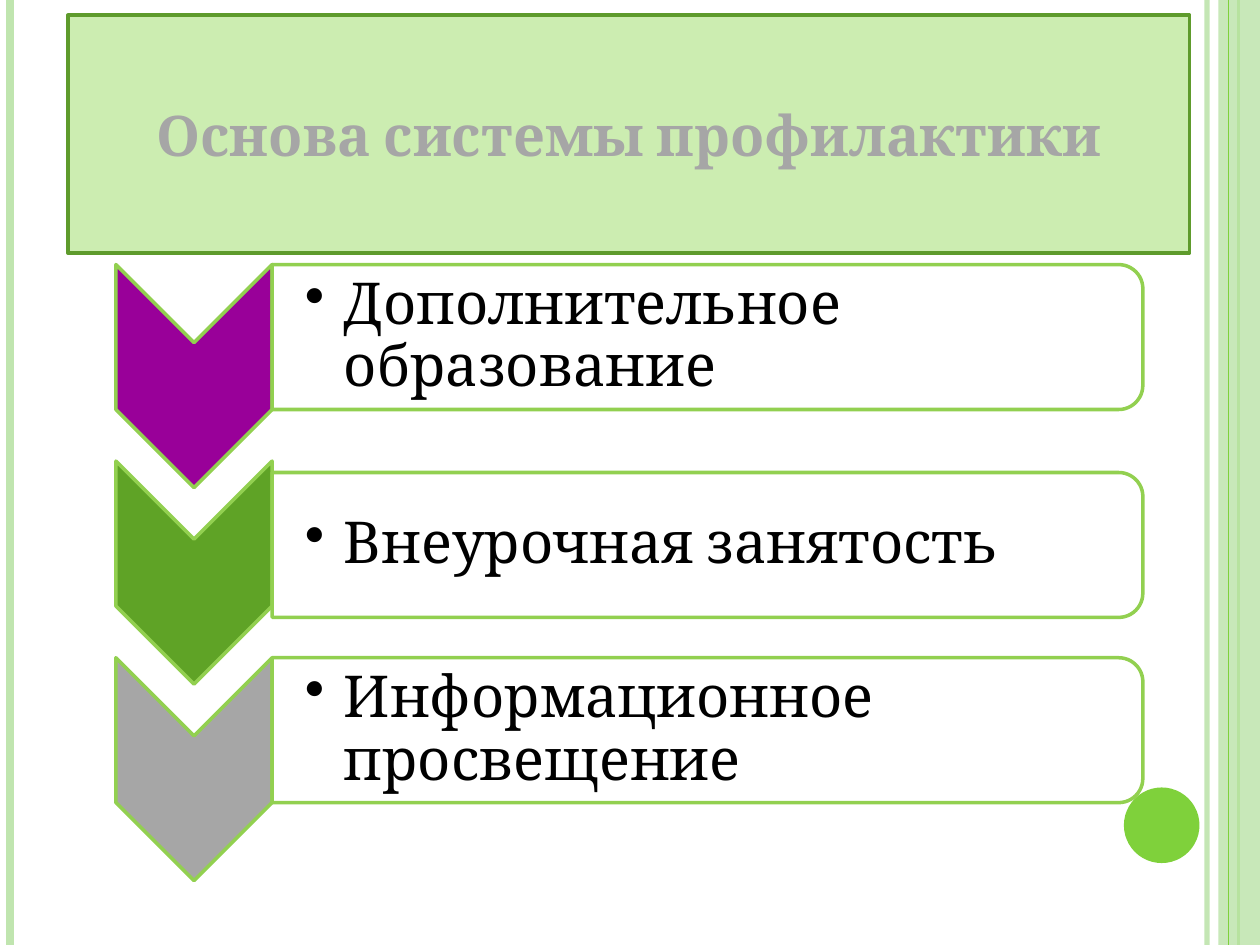
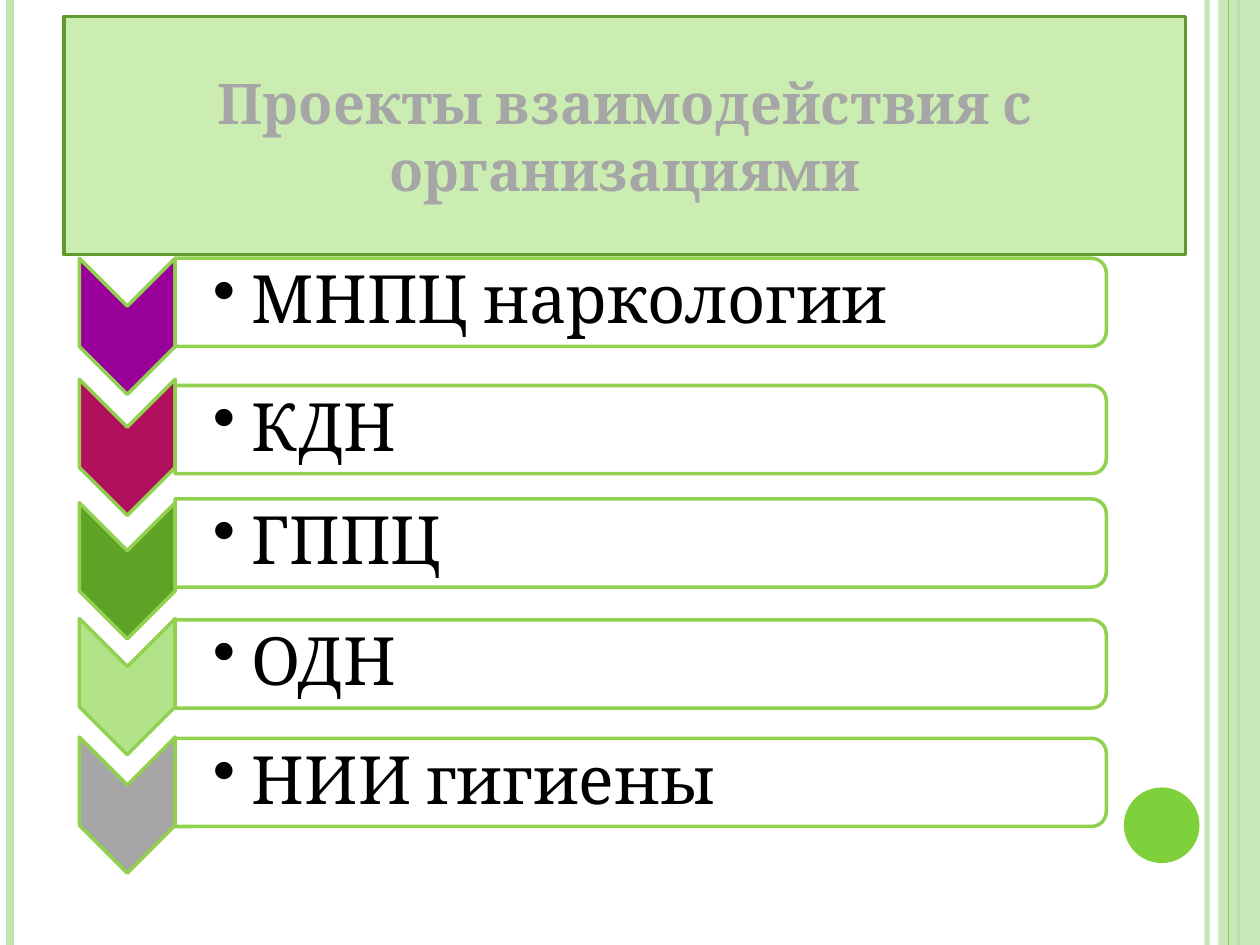
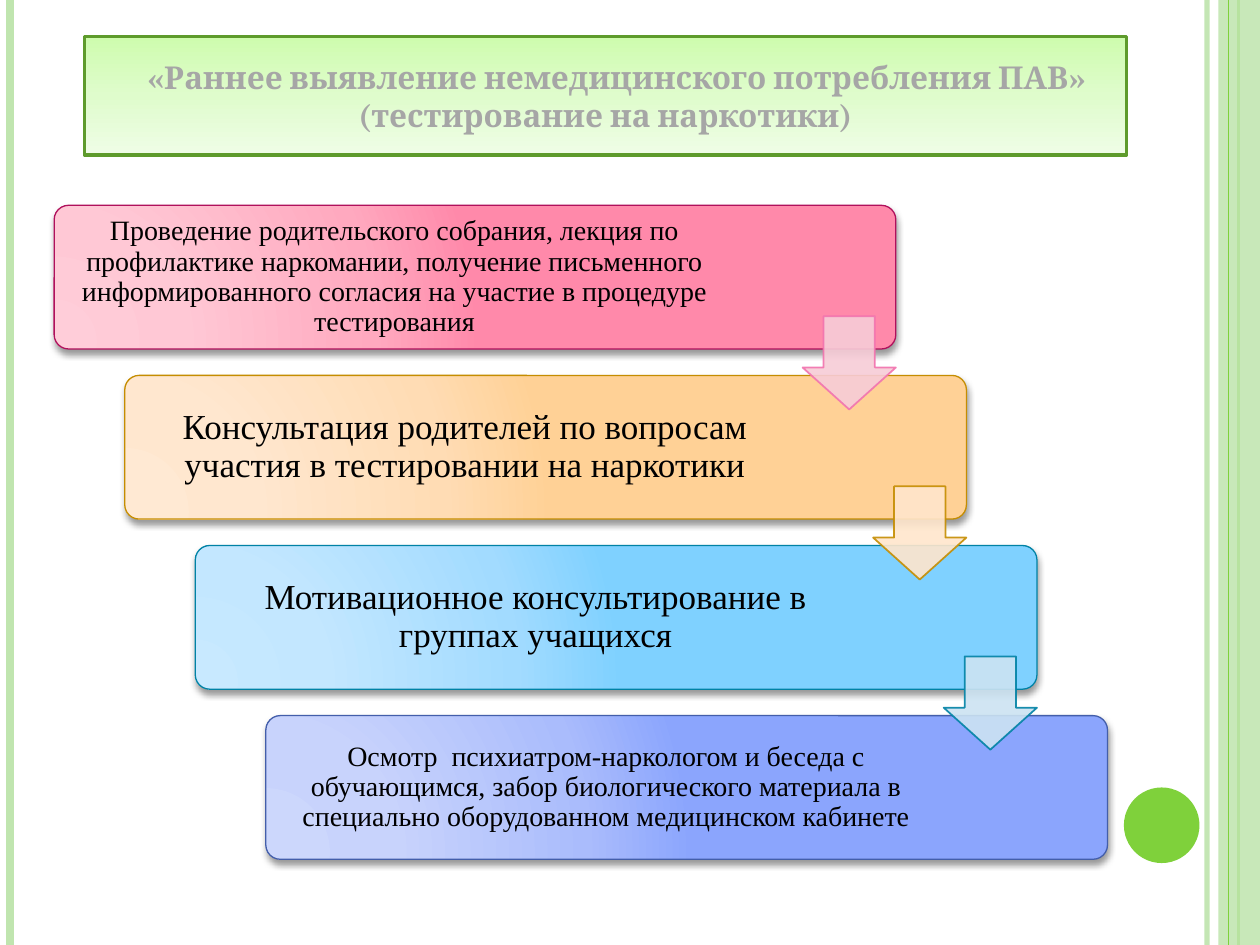
import pptx
import pptx.util
import pptx.dml.color
import pptx.enum.shapes
import pptx.enum.text
import pptx.oxml
import pptx.oxml.ns
from dataclasses import dataclass

SHAPE = pptx.enum.shapes.MSO_SHAPE
ALIGN = pptx.enum.text.PP_ALIGN
MIDDLE = pptx.enum.text.MSO_ANCHOR.MIDDLE
inch = pptx.util.Inches
NS = pptx.oxml.ns.nsdecls("a")


@dataclass(frozen=True)
class Theme:
    width: float = 10
    height: float = 7.5
    heading_font: str = "Cambria"
    step_font: str = "Times New Roman"
    title: str = "A6A6A6"
    title_size: int = 32
    small_title_size: int = 18
    text: str = "000000"
    pale: str = "C0E5AF"
    accent: str = "7FD13B"
    callout: str = "CCEDB1"
    callout_line: str = "5E9B2C"
    row_line: str = "92D050"
    white: str = "FFFFFF"
    purple: str = "990099"
    crimson: str = "B0105C"
    green: str = "5FA326"
    light_green: str = "B2E389"
    gray: str = "A6A6A6"


T = Theme()

# Content: each row is (text, chevron colour, chevron top, bar top)
LISTS = [
    dict(
        title="Основа системы профилактики", title_at=(0.54, 0.12),
        left=0.92, chevron=(1.24, 1.77), bar=(6.91, 1.15), size=33, inset=0.26,
        rows=[
            ("Дополнительное образование", T.purple, 2.1, 2.1),
            ("Внеурочная занятость", T.green, 3.66, 3.75),
            ("Информационное просвещение", T.gray, 5.22, 5.22),
        ],
    ),
    dict(
        title="Проекты взаимодействия с организациями", title_at=(0.51, 0.13),
        left=0.63, chevron=(0.76, 1.08), bar=(7.39, 0.7), size=38, inset=0.3,
        rows=[
            ("МНПЦ наркологии", T.purple, 2.05, 2.05),
            ("КДН", T.crimson, 3.01, 3.06),
            ("ГППЦ", T.green, 3.99, 3.96),
            ("ОДН", T.light_green, 4.91, 4.92),
            ("НИИ гигиены", T.gray, 5.85, 5.86),
        ],
    ),
]

TESTING_TITLE = "«Раннее выявление немедицинского потребления ПАВ» (тестирование на наркотики)"
TITLE_STOPS = [(0, "CEFCAE"), (50, "DFFCCC"), (100, "EFFDE6")]

# Steps: text, size, line colour, gradient colours, (arrow fill, arrow line)
STEPS = [
    ("Проведение родительского собрания, лекция по профилактике наркомании, "
     "получение письменного информированного согласия на участие в процедуре тестирования",
     16, "B0105C", ("FFCDD9", "FFC8D5", "FFA9BF", "FF89AA"), ("F7CCD7", "F273AF")),
    ("Консультация родителей по вопросам участия в тестировании на наркотики",
     20, "C58D01", ("FFE9D3", "FFE7CF", "FFDCB4", "FFD196"), ("FFE6CC", "C58D01")),
    ("Мотивационное консультирование в группах учащихся",
     20, "0082A5", ("C8E9FF", "C3E7FF", "A2DBFF", "7FD1FF"), ("CCE3F2", "0082A5")),
    ("Осмотр  психиатром-наркологом и беседа с обучающимся, забор биологического "
     "материала в специально оборудованном медицинском кабинете",
     16, "435EAA", ("CCD7FC", "C8D3FC", "AABCFC", "8BA5FD"), None),
]
STOP_PLACES = (0, 30, 75, 100)


# Drawing helpers
def rgb(value):
    return pptx.dml.color.RGBColor.from_string(value)


def xml(tag, attrs="", inner=""):
    return pptx.oxml.parse_xml(f"<a:{tag} {NS} {attrs}>{inner}</a:{tag}>")


def set_alpha(sp, where, percent):
    color = sp.element.spPr.xpath(f"./{where}/a:srgbClr")[0]
    color.append(xml("alpha", f'val="{percent * 1000}"'))


def set_line(sp, color, width, alpha=None):
    sp.line.color.rgb = rgb(color)
    sp.line.width = pptx.util.Pt(width)
    if alpha:
        set_alpha(sp, "a:ln/a:solidFill", alpha)


def set_fill(sp, color, alpha=None):
    sp.fill.solid()
    sp.fill.fore_color.rgb = rgb(color)
    if alpha:
        set_alpha(sp, "a:solidFill", alpha)


def set_gradient(sp, stops, direction):
    gs = "".join(f'<a:gs pos="{pos * 1000}"><a:srgbClr val="{c}"/></a:gs>' for pos, c in stops)
    geometry = sp.element.spPr.xpath("./a:prstGeom")[0]
    geometry.addnext(xml("gradFill", 'rotWithShape="1"', f"<a:gsLst>{gs}</a:gsLst>{direction}"))


def add_shape(slide, kind, left, top, width, height):
    sp = slide.shapes.add_shape(kind, inch(left), inch(top), inch(width), inch(height))
    sp.shadow.inherit = False
    return sp


def add_turned(slide, kind, left, top, width, height):
    """Place a shape turned by 90 degrees so that it covers the given box."""
    sp = add_shape(slide, kind, left + (width - height) / 2, top + (height - width) / 2, height, width)
    sp.rotation = 90
    return sp


def write(sp, text, font, size, color, align, insets, bold=False):
    tf = sp.text_frame
    tf.word_wrap = True
    tf.auto_size = pptx.enum.text.MSO_AUTO_SIZE.NONE
    tf.vertical_anchor = MIDDLE
    tf.margin_left, tf.margin_top, tf.margin_right, tf.margin_bottom = map(inch, insets)
    p = tf.paragraphs[0]
    p.alignment = align
    r = p.add_run()
    r.text = text
    r.font.name, r.font.size, r.font.bold = font, pptx.util.Pt(size), bold
    r.font.color.rgb = rgb(color)
    return p


def add_text(slide, box, *args):
    tb = slide.shapes.add_textbox(*map(inch, box))
    p = write(tb, *args)
    p.line_spacing = 0.9
    return tb


def add_title(slide, text, preset, box, size):
    sp = slide.shapes.title
    sp.left, sp.top, sp.width, sp.height = map(inch, box)
    sp.element.spPr.append(xml("prstGeom", f'prst="{preset}"', "<a:avLst/>"))
    set_line(sp, T.callout_line, 2)
    write(sp, text, T.heading_font, size, T.title, ALIGN.CENTER, (0.1, 0.05, 0.1, 0.05), True)
    return sp


# Side bands and the round badge, kept on the master
def add_bands(slide, master):
    def band(x, color, width, alpha=None):
        line = slide.shapes.add_connector(
            pptx.enum.shapes.MSO_CONNECTOR.STRAIGHT, inch(x), 0, inch(x), inch(T.height))
        set_line(line, color, width, alpha)
        line.element.spPr.append(xml("effectLst"))
        return line

    parts = [band(9.58, T.pale, 3, 93), band(0.08, T.pale, 4.5), band(9.83, T.accent, 1.5)]
    strip = add_shape(slide, SHAPE.RECTANGLE, 9.67, 0, 0.33, T.height)
    set_fill(strip, T.pale, 87)
    strip.line.fill.background()
    parts += [strip, band(9.75, T.accent, 0.75)]
    badge = add_shape(slide, SHAPE.OVAL, 8.92, 6.25, 0.6, 0.6)
    set_fill(badge, T.accent)
    badge.line.fill.background()
    parts.append(badge)
    for i, sp in enumerate(parts):
        sp.element.xpath(".//p:cNvPr")[0].set("id", str(100 + i))
        master.shapes.element.insert(2 + i, sp.element)


# Chevron list slides
def build_list(slide, data):
    title = add_title(slide, data["title"], "downArrowCallout",
                      (*data["title_at"], 8.9, 1.89), T.title_size)
    set_fill(title, T.callout)
    chevron_w, chevron_h = data["chevron"]
    bar_w, bar_h = data["bar"]
    bar_left = data["left"] + chevron_w
    for text, color, chevron_top, bar_top in data["rows"]:
        chevron = add_turned(slide, SHAPE.CHEVRON, data["left"], chevron_top, chevron_w, chevron_h)
        set_fill(chevron, color)
        bar = add_turned(slide, SHAPE.ROUND_2_SAME_RECTANGLE, bar_left, bar_top, bar_w, bar_h)
        set_fill(bar, T.white, 90)
        for sp in (chevron, bar):
            set_line(sp, T.row_line, 2)
        tb = add_text(slide, (bar_left, bar_top + 0.04, bar_w - 0.05, bar_h - 0.08), text,
                      T.heading_font, data["size"], T.text, ALIGN.LEFT,
                      (data["inset"], 0.02, 0.02, 0.02))
        ppr = tb.element.xpath(".//a:pPr")[0]
        ppr.set("marL", str(inch(0.31)))
        ppr.set("indent", str(inch(-0.31)))
        ppr.append(xml("buChar", 'char="•"'))


# Staircase of testing steps
def build_steps(slide):
    title = add_title(slide, TESTING_TITLE, "roundRect", (0.67, 0.29, 8.27, 0.94), T.small_title_size)
    set_gradient(title, TITLE_STOPS, '<a:lin ang="5400000" scaled="0"/>')
    title.element.xpath(".//a:pPr")[0].set("indent", str(inch(0.18)))

    width, height, arrow_side = 6.68, 1.14, 0.74
    places = [(0.43 + 0.56 * i, 1.63 + 1.35 * i) for i in range(len(STEPS))]
    radial = '<a:path path="circle"><a:fillToRect l="5000" t="100000" r="120000" b="10000"/></a:path>'
    for (left, top), (text, size, line, colors, _) in zip(places, STEPS):
        card = add_shape(slide, SHAPE.ROUNDED_RECTANGLE, left, top, width, height)
        card.adjustments[0] = 0.1
        set_gradient(card, zip(STOP_PLACES, colors), radial)
        set_line(card, line, 0.75)
        card.element.spPr.xpath("./a:effectLst")[0].append(xml(
            "outerShdw", 'blurRad="50800" dist="25400" dir="5400000" rotWithShape="0"',
            '<a:srgbClr val="000000"><a:alpha val="40000"/></a:srgbClr>'))
        add_text(slide, (left + 0.04, top + 0.03, 5.32, 1.08), text, T.step_font, size, T.text,
                 ALIGN.CENTER, (0.07,) * 4)
    for (left, top), (*_, arrow_colors) in zip(places, STEPS):
        if arrow_colors:
            arrow = add_shape(slide, SHAPE.DOWN_ARROW, left + width - arrow_side, top + 0.88,
                              arrow_side, arrow_side)
            arrow.adjustments[0], arrow.adjustments[1] = 0.55, 0.45
            set_fill(arrow, arrow_colors[0], 90)
            set_line(arrow, arrow_colors[1], 1, 90)


def main():
    prs = pptx.Presentation()
    prs.slide_width, prs.slide_height = inch(T.width), inch(T.height)
    title_only = prs.slide_layouts[5]
    slides = [prs.slides.add_slide(title_only) for _ in range(len(LISTS) + 1)]
    add_bands(slides[0], prs.slide_master)
    for slide, data in zip(slides, LISTS):
        build_list(slide, data)
    build_steps(slides[-1])
    prs.save("out.pptx")


if __name__ == "__main__":
    main()
